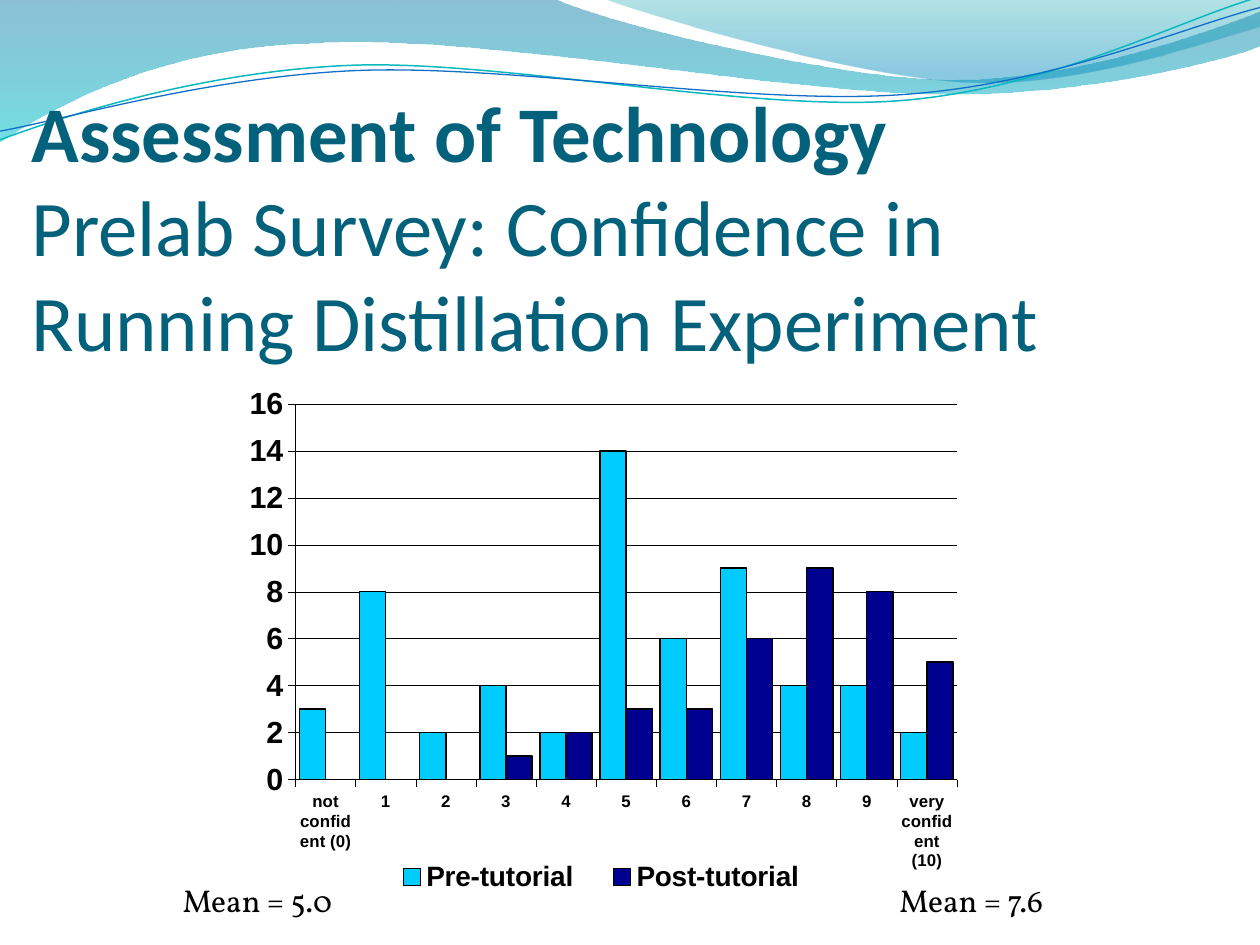
from dataclasses import dataclass

from lxml.etree import SubElement
from pptx import Presentation
from pptx.chart.data import CategoryChartData
from pptx.dml.color import RGBColor
from pptx.enum.chart import XL_CHART_TYPE, XL_LEGEND_POSITION, XL_TICK_LABEL_POSITION, XL_TICK_MARK
from pptx.enum.text import MSO_ANCHOR, MSO_AUTO_SIZE, PP_ALIGN
from pptx.oxml import parse_xml
from pptx.oxml.ns import nsdecls, qn
from pptx.util import Pt


@dataclass(frozen=True)
class Theme:
    title: str = "04617B"
    ink: str = "000000"
    pre: str = "00CCFF"
    post: str = "000090"
    title_font: str = "Calibri"
    chart_font: str = "Arial"
    note_font: str = "Vollkorn"
    title_size: float = 45
    value_size: float = 17.4
    category_size: float = 9.6
    legend_size: float = 16
    note_size: float = 18


@dataclass(frozen=True)
class Stop:
    position: float
    color: str
    opacity: int


@dataclass(frozen=True)
class Wave:
    """A start point, then one point per line or three per Bézier curve."""
    start: tuple
    segments: tuple
    stops: tuple = ()
    line: str = ""
    line_width: float = 0


@dataclass(frozen=True)
class Note:
    text: str
    left: float


@dataclass(frozen=True)
class Series:
    name: str
    values: tuple
    color: str


THEME = Theme()

WAVES = (
    Wave((0, 0), (
        ((316.8, -0.7),),
        ((342.7, 12.2), (478.1, 45.4), (545.8, 45.4)),
        ((614.2, 45.4), (689.8, 18.7), (720, 6.5)),
        ((720.7, 25.9),),
        ((709.2, 31.7), (626.4, 54.7), (537.1, 54)),
        ((447.8, 53.3), (275, 20.2), (185, 24.5)),
        ((92.9, 25.9), (33.1, 59.8), (-0.7, 81.4)),
        ((0, 0),),
    ), stops=(Stop(0, "0074A1", 45), Stop(1, "00C6CF", 55))),
    Wave((344.9, -0.7), (
        ((366.5, 7.9), (491, 44.6), (553.7, 46.8)),
        ((616.3, 49.7), (691.9, 23), (720, 15.1)),
        ((720, 0),),
        ((344.9, -0.7),),
    ), stops=(Stop(0, "00A1A9", 30), Stop(0.8, "008BBF", 45))),
    Wave((0, 79.9), (
        ((34.6, 67), (113.8, 41), (199.4, 37.4)),
        ((284.4, 33.8), (427, 64.1), (513.4, 57.6)),
        ((599.8, 51.1), (675.4, 10.8), (718.6, -1.4)),
    ), line="0AB8BF", line_width=0.85),
    Wave((0, 74.9), (
        ((33.8, 69.1), (118.1, 43.9), (203.8, 40.3)),
        ((290.2, 36.7), (429.8, 60.5), (516.2, 54)),
        ((601.9, 48.2), (677.5, 15.1), (720, 4.3)),
    ), line="0F6FC6", line_width=0.75),
)

CATEGORIES = ("not confident (0)", *map(str, range(1, 10)), "very confident (10)")
SERIES = (
    Series("Pre-tutorial", (3, 8, 2, 4, 2, 14, 6, 9, 4, 4, 2), THEME.pre),
    Series("Post-tutorial", (0, 0, 0, 1, 2, 3, 3, 6, 9, 8, 5), THEME.post),
)
NOTES = (Note("Mean = 5.0", 97.2), Note("Mean = 7.6", 506.9))


def rgb(color: str) -> RGBColor:
    return RGBColor.from_string(color)


def style_font(font, name: str, size: float, color: str, bold=None) -> None:
    font.name, font.size, font.bold = name, Pt(size), bold
    font.color.rgb = rgb(color)


def style_line(line, color: str, width: float) -> None:
    line.color.rgb = rgb(color)
    line.width = Pt(width)


def bend(shape, segments: tuple) -> None:
    """Join each run of three straight steps into one Bézier curve."""
    steps = iter(list(shape.element.iter(qn("a:lnTo"))))
    for segment in segments:
        parts = [next(steps) for _ in segment]
        if len(parts) == 3:
            curve = parse_xml(f'<a:cubicBezTo {nsdecls("a")}/>')
            parts[0].addprevious(curve)
            for part in parts:
                curve.append(part[0])
                part.getparent().remove(part)


def draw_wave(page, wave: Wave) -> None:
    points = [(Pt(x), Pt(y)) for segment in wave.segments for x, y in segment]
    builder = page.shapes.build_freeform(Pt(wave.start[0]), Pt(wave.start[1]), scale=1.0)
    builder.add_line_segments(points, close=bool(wave.stops))
    shape = builder.convert_to_shape()
    bend(shape, wave.segments)
    shape.shadow.inherit = False
    if not wave.stops:
        shape.fill.background()
        style_line(shape.line, wave.line, wave.line_width)
        return
    shape.line.fill.background()
    shape.fill.gradient()
    shape.fill.gradient_angle = 270
    for target, stop in zip(shape.fill.gradient_stops, wave.stops):
        target.position = stop.position
        target.color.rgb = rgb(stop.color)
    # Opacity of each gradient stop
    for color, stop in zip(shape.element.spPr.iter(qn("a:srgbClr")), wave.stops):
        SubElement(color, qn("a:alpha")).set("val", str(stop.opacity * 1000))


def write_title(page) -> None:
    title = page.shapes.title
    title.left, title.top, title.width, title.height = Pt(18), Pt(150), Pt(678.2), Pt(59.8)
    frame = title.text_frame
    frame.auto_size, frame.word_wrap = MSO_AUTO_SIZE.NONE, True
    frame.vertical_anchor = MSO_ANCHOR.BOTTOM
    frame.margin_left = frame.margin_right = frame.margin_bottom = Pt(0)
    frame.margin_top = Pt(3.6)
    para = frame.paragraphs[0]
    para.alignment = PP_ALIGN.LEFT
    style_font(para.font, THEME.title_font, THEME.title_size, THEME.title)
    heading = para.add_run()
    heading.text, heading.font.bold = "Assessment of Technology", True
    para.add_line_break()
    para.add_run().text = "Prelab Survey: Confidence in Running Distillation Experiment"
    # Bring the title in front of the waves
    page.shapes.element.append(title.element)


def layout(x: float, y: float, width: float, height: float, inner: bool = False):
    target = '<c:layoutTarget val="inner"/>' if inner else ""
    return parse_xml(
        f'<c:layout {nsdecls("c")}><c:manualLayout>{target}<c:xMode val="edge"/><c:yMode val="edge"/>'
        f'<c:x val="{x}"/><c:y val="{y}"/><c:w val="{width}"/><c:h val="{height}"/></c:manualLayout></c:layout>')


def set_layout(element, new_layout, after: str = "") -> None:
    for old in element.findall(qn("c:layout")):
        element.remove(old)
    if after:
        element.find(qn(after)).addnext(new_layout)
    else:
        element.insert(0, new_layout)


def draw_chart(page) -> None:
    data = CategoryChartData()
    data.categories = CATEGORIES
    for series in SERIES:
        data.add_series(series.name, series.values)
    chart = page.shapes.add_chart(XL_CHART_TYPE.COLUMN_CLUSTERED, Pt(136.8), Pt(221), Pt(421.9), Pt(306), data).chart
    style_font(chart.font, THEME.chart_font, THEME.value_size, THEME.ink, True)
    chart.has_title = False

    # Columns
    plot = chart.plots[0]
    plot.gap_width, plot.overlap, plot.vary_by_categories = 30, 0, False
    for bars, series in zip(plot.series, SERIES):
        bars.format.fill.solid()
        bars.format.fill.fore_color.rgb = rgb(series.color)
        style_line(bars.format.line, THEME.ink, 0.87)

    # Axes, with level labels
    values, categories = chart.value_axis, chart.category_axis
    for axis, size in ((values, THEME.value_size), (categories, THEME.category_size)):
        style_font(axis.tick_labels.font, THEME.chart_font, size, THEME.ink, True)
        style_line(axis.format.line, THEME.ink, 0.22)
        axis.major_tick_mark = XL_TICK_MARK.OUTSIDE
        label_body = next(axis._element.iter(qn("a:bodyPr")))
        label_body.set("rot", "0")
        label_body.set("vert", "horz")
    categories.tick_label_position = XL_TICK_LABEL_POSITION.LOW
    values.minimum_scale, values.maximum_scale, values.major_unit = 0, 16, 2
    style_line(values.major_gridlines.format.line, THEME.ink, 0.22)

    # Legend and plot area
    chart.has_legend = True
    legend = chart.legend
    legend.position, legend.include_in_layout = XL_LEGEND_POSITION.BOTTOM, False
    style_font(legend.font, THEME.chart_font, THEME.legend_size, THEME.ink, True)
    chart_space = chart.element
    set_layout(next(chart_space.iter(qn("c:plotArea"))), layout(0.076, 0.032, 0.896, 0.702, True))
    set_layout(next(chart_space.iter(qn("c:legend"))), layout(0.18, 0.88, 0.62, 0.07), "c:legendPos")


def write_note(page, note: Note) -> None:
    frame = page.shapes.add_textbox(Pt(note.left), Pt(499.7), Pt(135.4), Pt(36)).text_frame
    frame.word_wrap, frame.auto_size = False, MSO_AUTO_SIZE.SHAPE_TO_FIT_TEXT
    para = frame.paragraphs[0]
    para.text = note.text
    style_font(para.font, THEME.note_font, THEME.note_size, THEME.ink)


def main() -> None:
    deck = Presentation()
    deck.slide_width, deck.slide_height = Pt(720), Pt(540)
    page = deck.slides.add_slide(deck.slide_layouts[5])
    for wave in WAVES:
        draw_wave(page, wave)
    write_title(page)
    draw_chart(page)
    for note in NOTES:
        write_note(page, note)
    deck.save("out.pptx")


if __name__ == "__main__":
    main()
